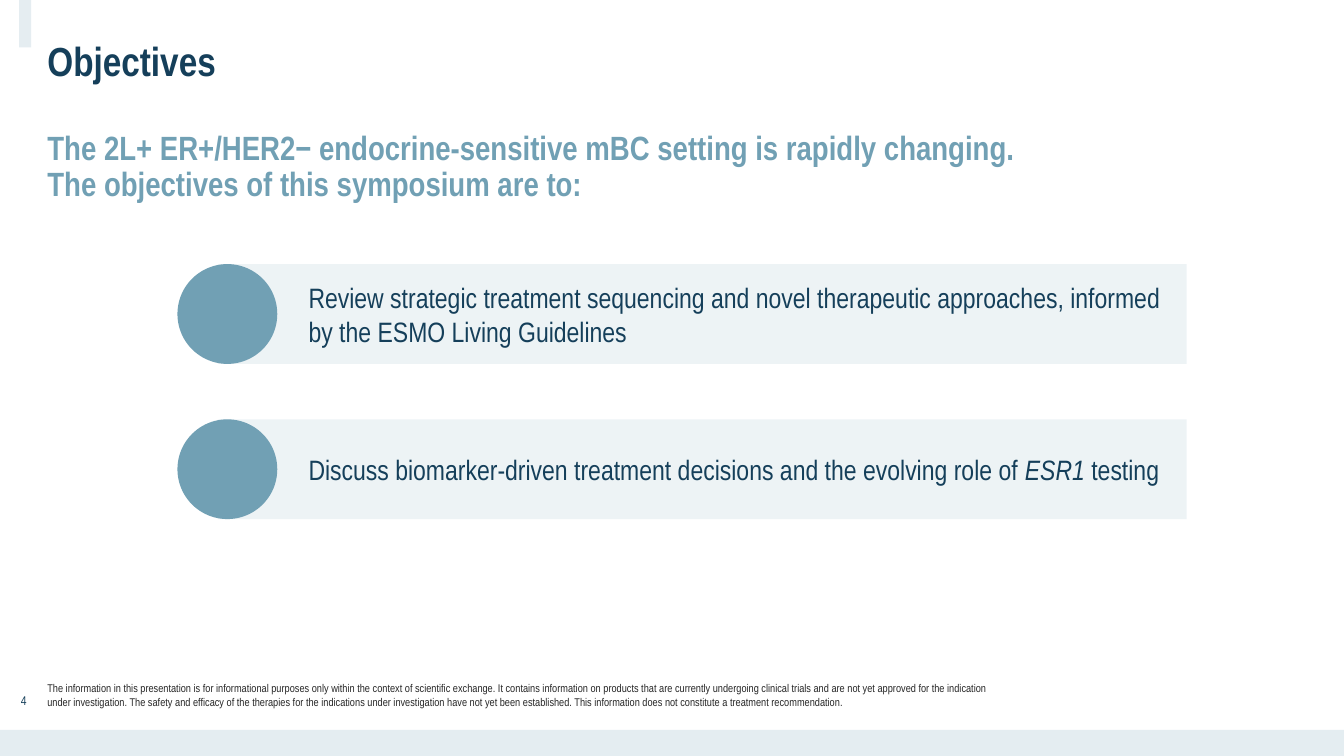
from lxml import etree
from pptx import Presentation, util as u
from pptx.dml.color import RGBColor
from pptx.enum import shapes, text
from pptx.oxml.ns import qn

FONT = "Arial Narrow"
NAVY, TEAL, PALE, INK = "153F5A", "71A0B4", "E4EDF1", "262626"
WIDTH, HEIGHT = 13.33, 7.5
MARGIN = 0.47

HEADING = [
    ("Objectives", 29, NAVY, 0),
    ("The 2L+ ER+/HER2− endocrine-sensitive mBC setting is rapidly changing.", 24, TEAL, 33),
    ("The objectives of this symposium are to:", 24, TEAL, 0),
]
OBJECTIVES = [
    [("Review strategic treatment sequencing and novel therapeutic approaches, "
      "informed by the ESMO Living Guidelines", False)],
    [("Discuss biomarker-driven treatment decisions and the evolving role of ", False),
     ("ESR1 ", True), ("testing", False)],
]
DISCLAIMER = (
    "The information in this presentation is for informational purposes only within the "
    "context of scientific exchange. It contains information on products that are currently "
    "undergoing clinical trials and are not yet approved for the indication under "
    "investigation. The safety and efficacy of the therapies for the indications under "
    "investigation have not yet been established. This information does not constitute a "
    "treatment recommendation."
)


def color(value):
    """Turn a hex string into a colour."""
    return RGBColor.from_string(value)


def inches(*lengths):
    """Convert lengths in inches to slide units."""
    return [u.Inches(length) for length in lengths]


def style(paragraph, size, tone, bold=False):
    """Set the font of a whole paragraph."""
    font = paragraph.font
    font.name, font.size, font.bold = FONT, u.Pt(size), bold
    font.color.rgb = color(tone)


def set_frame(frame, anchor, left=0, top=0, right=0, bottom=0):
    """Set wrapping, anchor and insets of a text frame."""
    frame.word_wrap = True
    frame.auto_size = text.MSO_AUTO_SIZE.NONE
    frame.vertical_anchor = anchor
    frame.margin_left, frame.margin_top, frame.margin_right, frame.margin_bottom = inches(
        left, top, right, bottom)


def add_block(parent, kind, box, tone, opacity=100):
    """Add a flat filled shape without outline or shadow."""
    block = parent.add_shape(kind, *inches(*box))
    block.shadow.inherit = False
    block.line.fill.background()
    block.fill.solid()
    block.fill.fore_color.rgb = color(tone)
    if opacity < 100:
        fill = block._element.spPr.find(qn("a:solidFill"))
        etree.SubElement(fill[0], qn("a:alpha"), val=str(opacity * 1000))
    return block


def add_decoration(slide):
    """Draw the top tab and the bottom band."""
    rectangle = shapes.MSO_SHAPE.RECTANGLE
    add_block(slide.shapes, rectangle, (0.19, 0, 0.12, MARGIN), TEAL, 18)
    add_block(slide.shapes, rectangle, (0, HEIGHT - 0.26, WIDTH, 0.26), PALE)


def add_heading(slide, box):
    """Fill the title placeholder with the heading and its lead-in."""
    title = slide.shapes.title
    title.left, title.top, title.width, title.height = inches(*box)
    frame = title.text_frame
    frame.text = "\n".join(line for line, *_ in HEADING)
    set_frame(frame, text.MSO_ANCHOR.TOP)
    for paragraph, (_, size, tone, gap) in zip(frame.paragraphs, HEADING):
        paragraph.alignment = text.PP_ALIGN.LEFT
        paragraph.line_spacing = 0.9
        paragraph.space_before = u.Pt(gap)
        style(paragraph, size, tone, bold=True)


def add_objective(slide, box, runs):
    """Place one objective: a bar with a disc over its left end."""
    left, top, width, height = box
    disc_overhang = 0.4
    group = slide.shapes.add_group_shape()
    bar = add_block(group.shapes, shapes.MSO_SHAPE.RECTANGLE,
                    (left + disc_overhang, top, width - disc_overhang, height), TEAL, 12)
    set_frame(bar.text_frame, text.MSO_ANCHOR.MIDDLE, 0.9, 0.08, 0.12, 0.08)
    paragraph = bar.text_frame.paragraphs[0]
    paragraph.alignment = text.PP_ALIGN.LEFT
    style(paragraph, 20, NAVY)
    for words, italic in runs:
        run = paragraph.add_run()
        run.text = words
        if italic:
            run.font.italic = True
    add_block(group.shapes, shapes.MSO_SHAPE.OVAL, (left, top, height, height), TEAL)


def add_objectives(slide, box, pitch):
    """Stack the objectives at an equal pitch below the first box."""
    left, top, width, height = box
    for row, runs in enumerate(OBJECTIVES):
        add_objective(slide, (left, top + row * pitch, width, height), runs)


def add_note(slide, box, words, size, tone, alignment, anchor):
    """Add a small text without insets."""
    frame = slide.shapes.add_textbox(*inches(*box)).text_frame
    set_frame(frame, anchor)
    frame.text = words
    frame.paragraphs[0].alignment = alignment
    style(frame.paragraphs[0], size, tone)


def add_footer(slide, top):
    """Add the page number and the disclaimer."""
    add_note(slide, (0, top, MARGIN, 0.14), "4", 9, NAVY,
             text.PP_ALIGN.CENTER, text.MSO_ANCHOR.TOP)
    add_note(slide, (MARGIN, top, 9.44, 0.16), DISCLAIMER, 8, INK,
             text.PP_ALIGN.LEFT, text.MSO_ANCHOR.BOTTOM)


def main():
    """Build the objectives slide."""
    deck = Presentation()
    deck.slide_width, deck.slide_height = inches(WIDTH, HEIGHT)
    slide = deck.slides.add_slide(deck.slide_layouts.get_by_name("Title Only"))
    add_decoration(slide)
    add_heading(slide, (MARGIN, 0.41, WIDTH - 2 * MARGIN, 0.74))
    add_objectives(slide, (1.76, 2.62, 10.01, 0.99), 1.54)
    add_footer(slide, 6.87)
    deck.save("out.pptx")


if __name__ == "__main__":
    main()
